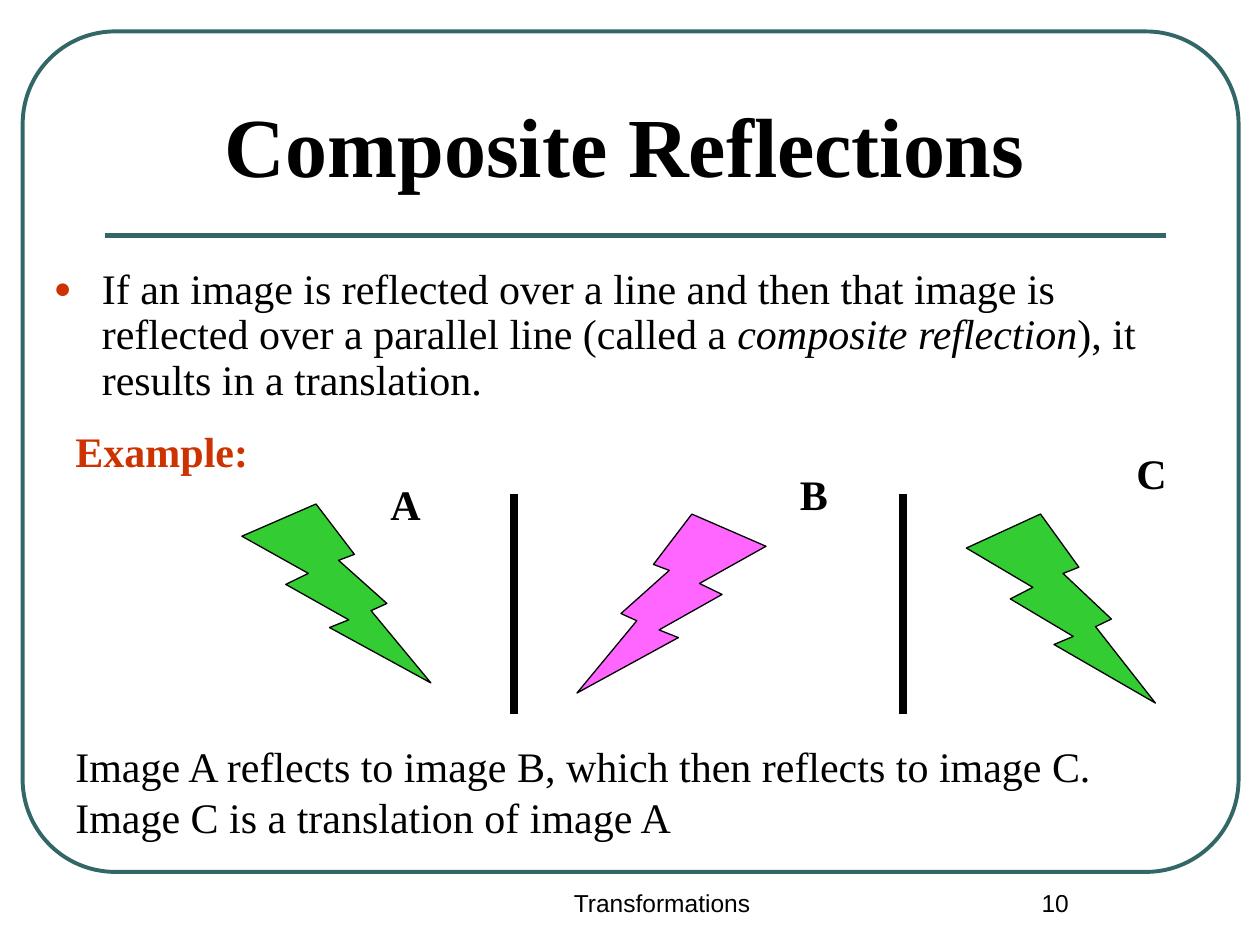
from dataclasses import dataclass

from lxml.etree import SubElement
from pptx import Presentation
from pptx.dml.color import RGBColor
from pptx.enum.shapes import MSO_CONNECTOR, MSO_SHAPE
from pptx.enum.text import MSO_ANCHOR, PP_ALIGN
from pptx.oxml.ns import qn
from pptx.util import Inches, Pt

BLACK = RGBColor(0x00, 0x00, 0x00)
TEAL = RGBColor(0x33, 0x66, 0x66)
RED = RGBColor(0xCC, 0x33, 0x00)
GREEN = RGBColor(0x33, 0xCC, 0x33)
PINK = RGBColor(0xFF, 0x66, 0xFF)
SERIF = "Times New Roman"
SANS = "Arial"


@dataclass(frozen=True)
class Caption:
    text: str
    left: float
    top: float
    width: float
    height: float = 0.5
    size: int = 24
    font: str = SERIF
    color: RGBColor = BLACK
    bold: bool = False
    align: PP_ALIGN = PP_ALIGN.LEFT
    anchor: MSO_ANCHOR = MSO_ANCHOR.TOP
    space_before: int = 50


@dataclass(frozen=True)
class Bolt:
    left: float
    top: float
    height: float
    color: RGBColor
    mirrored: bool = False


@dataclass(frozen=True)
class Rule:
    x1: float
    y1: float
    x2: float
    y2: float
    color: RGBColor
    weight: float


RULES = [
    Rule(0.83, 1.87, 9.25, 1.87, TEAL, 3),
    Rule(4.08, 3.92, 4.08, 5.67, BLACK, 4.5),
    Rule(7.17, 3.92, 7.17, 5.67, BLACK, 4.5),
]
BOLTS = [
    Bolt(1.92, 4, 1.42, GREEN),
    Bolt(7.67, 4.08, 1.5, GREEN),
    Bolt(4.58, 4.08, 1.42, PINK, mirrored=True),
]
CAPTIONS = [
    Caption("Transformations", 3.67, 7, 3.17, size=14, font=SANS,
            align=PP_ALIGN.CENTER, space_before=0),
    Caption("10", 7.5, 7, 1.75, size=14, font=SANS,
            align=PP_ALIGN.CENTER, space_before=0),
    Caption("Composite Reflections", 0.75, 0.67, 8.42, 0.92, size=48, bold=True,
            align=PP_ALIGN.CENTER, anchor=MSO_ANCHOR.BOTTOM, space_before=0),
    Caption("A", 3, 3.75, 0.67, bold=True),
    Caption("B", 6.25, 3.67, 0.42, bold=True),
    Caption("C", 8.92, 3.5, 0.5, bold=True),
    Caption("Image A reflects to image B, which then reflects to image C. "
            "Image C is a translation of image A", 0.5, 5.83, 8.92, 0.9),
    Caption("Example:", 0.5, 3.33, 1.75, color=RED, bold=True),
]
DEFINITION = Caption(
    "If an image is reflected over a line and then that image is "
    "reflected over a parallel line (called a ",
    0.33, 2.08, 9.25, 1.25, space_before=20)


def style_run(run, caption: Caption) -> None:
    run.font.name = caption.font
    run.font.size = Pt(caption.size)
    run.font.bold = caption.bold
    run.font.color.rgb = caption.color


def add_caption(slide, caption: Caption):
    box = slide.shapes.add_textbox(Inches(caption.left), Inches(caption.top),
                                   Inches(caption.width), Inches(caption.height))
    frame = box.text_frame
    frame.word_wrap = True
    frame.vertical_anchor = caption.anchor
    frame.text = caption.text
    paragraph = frame.paragraphs[0]
    paragraph.alignment = caption.align
    if caption.space_before:
        before = SubElement(paragraph._p.get_or_add_pPr(), qn("a:spcBef"))
        SubElement(before, qn("a:spcPct"), val=str(caption.space_before * 1000))
    style_run(paragraph.runs[0], caption)
    return paragraph


def add_definition(slide) -> None:
    paragraph = add_caption(slide, DEFINITION)
    for text, italic in [("composite reflection", True),
                         ("), it results in a translation.", False)]:
        run = paragraph.add_run()
        run.text = text
        style_run(run, DEFINITION)
        run.font.italic = italic
    paragraph.line_spacing = 0.9
    properties = paragraph._p.get_or_add_pPr()
    properties.set("marL", str(Inches(0.38)))
    properties.set("indent", str(Inches(-0.38)))
    bullet_color = SubElement(properties, qn("a:buClr"))
    SubElement(bullet_color, qn("a:srgbClr"), val=str(RED))
    SubElement(properties, qn("a:buSzPct"), val="70000")
    SubElement(properties, qn("a:buFont"), typeface=SANS)
    SubElement(properties, qn("a:buChar"), char="●")


def add_rule(slide, rule: Rule) -> None:
    line = slide.shapes.add_connector(
        MSO_CONNECTOR.STRAIGHT, Inches(rule.x1), Inches(rule.y1),
        Inches(rule.x2), Inches(rule.y2))
    line.line.color.rgb = rule.color
    line.line.width = Pt(rule.weight)
    SubElement(line._element.spPr, qn("a:effectLst"))


def add_bolt(slide, bolt: Bolt) -> None:
    shape = slide.shapes.add_shape(
        MSO_SHAPE.LIGHTNING_BOLT, Inches(bolt.left), Inches(bolt.top),
        Inches(1.5), Inches(bolt.height))
    shape.shadow.inherit = False
    shape.fill.solid()
    shape.fill.fore_color.rgb = bolt.color
    shape.line.color.rgb = BLACK
    shape.line.width = Pt(0.75)
    if bolt.mirrored:
        shape._element.spPr.find(qn("a:xfrm")).set("flipH", "1")


def add_border(slide) -> None:
    border = slide.shapes.add_shape(
        MSO_SHAPE.ROUNDED_RECTANGLE, Inches(0.18), Inches(0.25),
        Inches(9.65), Inches(6.67))
    border.adjustments[0] = 0.11
    border.shadow.inherit = False
    border.fill.background()
    border.line.color.rgb = TEAL
    border.line.width = Pt(2.25)


def main() -> None:
    deck = Presentation()
    deck.slide_width = Inches(10)
    deck.slide_height = Inches(7.5)
    slide = deck.slides.add_slide(deck.slide_layouts[6])
    add_border(slide)
    for rule in RULES:
        add_rule(slide, rule)
    for bolt in BOLTS:
        add_bolt(slide, bolt)
    add_definition(slide)
    for caption in CAPTIONS:
        add_caption(slide, caption)
    deck.save("out.pptx")


if __name__ == "__main__":
    main()
